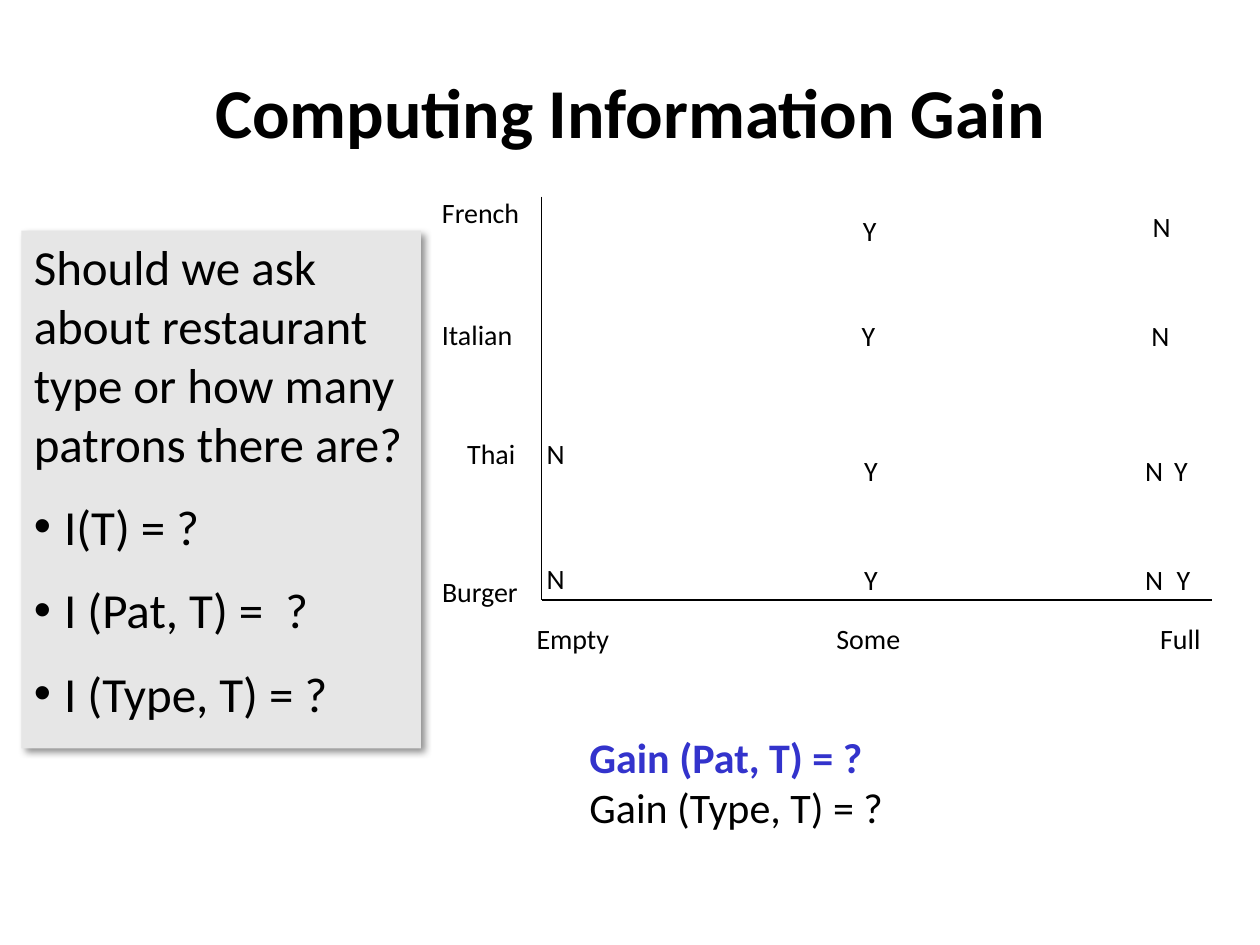
from lxml.etree import SubElement
from pptx import Presentation
from pptx.dml.color import RGBColor
from pptx.enum.shapes import MSO_CONNECTOR, MSO_SHAPE
from pptx.enum.text import MSO_ANCHOR, PP_ALIGN
from pptx.oxml import parse_xml
from pptx.oxml.ns import nsdecls, qn
from pptx.util import Inches, Pt

BLACK = RGBColor(0, 0, 0)
BLUE = RGBColor(0x33, 0x33, 0xCC)
GREY = RGBColor(0xE6, 0xE6, 0xE6)

prs = Presentation()
prs.slide_width, prs.slide_height = Inches(10), Inches(7.5)
s = prs.slides.add_slide(prs.slide_layouts[6])
COL, ROW = prs.slide_width / 100, prs.slide_height / 100


def area(left, top, width, height):
    """Turn percentages of the slide into lengths."""
    return int(left * COL), int(top * ROW), int(width * COL), int(height * ROW)


def write(sp, lines, size, wrap=True):
    tf = sp.text_frame
    tf.word_wrap = wrap
    tf.text = "\n".join(lines)
    for p in tf.paragraphs:
        p.alignment = PP_ALIGN.LEFT
        for r in p.runs:
            r.font.name, r.font.size = "Calibri", Pt(size)
            r.font.color.rgb = BLACK
    return tf


# Title
tf = write(s.shapes.add_textbox(*area(7.5, 3.33, 85, 16.67)),
           ["Computing Information Gain"], 40)
tf.vertical_anchor = MSO_ANCHOR.MIDDLE
tf.paragraphs[0].alignment = PP_ALIGN.CENTER
tf.paragraphs[0].runs[0].font.bold = True

# Axes
LEFT, RIGHT, TOP, BOTTOM = 43, 96.2, 20.8, 63.5
for x1, y1, x2, y2 in [(LEFT, TOP, LEFT, BOTTOM), (LEFT, BOTTOM, RIGHT, BOTTOM)]:
    axis = s.shapes.add_connector(MSO_CONNECTOR.STRAIGHT, *area(x1, y1, x2, y2))
    axis.line.color.rgb, axis.line.width = BLACK, Pt(0.75)
    SubElement(axis._element.spPr, qn("a:effectLst"))

# Axis labels and marks: text, left, top, width
labels = [("French", 34.1, 20, 8.3), ("Italian", 34.1, 32.9, 7.7),
          ("Thai", 36.1, 45.5, 6.1), ("Burger", 34.1, 60.1, 8.2),
          ("Empty", 41.6, 65.1, 7.9), ("Some", 65.4, 65.1, 7.1),
          ("Full", 91.1, 65.1, 5.3)]
MARK_WIDTH = {"Y": 3.1, "N": 3.5}
marks = [("Y", 67.5, 21.9), ("N", 90.5, 21.5),
         ("Y", 67.4, 33.1), ("N", 90.4, 33.1),
         ("N", 42.4, 45.5), ("Y", 67.6, 47.3), ("N", 89.9, 47.3), ("Y", 92.2, 47.3),
         ("N", 42.4, 58.8), ("Y", 67.6, 58.9), ("N", 89.9, 58.9), ("Y", 92.4, 58.9)]
labels += [(mark, left, top, MARK_WIDTH[mark]) for mark, left, top in marks]
for text, left, top, width in labels:
    write(s.shapes.add_textbox(*area(left, top, width, 4.93)), [text], 16, wrap=False)

# Question panel
panel = s.shapes.add_shape(MSO_SHAPE.RECTANGLE, *area(1.7, 24.4, 31.7, 54.8))
panel.fill.solid()
panel.fill.fore_color.rgb = GREY
panel.line.fill.background()
panel._element.spPr.append(parse_xml(
    f'<a:effectLst {nsdecls("a")}><a:outerShdw blurRad="{Pt(4)}" dist="{Pt(3)}" '
    'dir="2700000" algn="tl" rotWithShape="0"><a:srgbClr val="000000">'
    '<a:alpha val="43000"/></a:srgbClr></a:outerShdw></a:effectLst>'))
tf = write(panel, ["Should we ask about restaurant type or how many patrons there are?",
                   "I(T) = ?", "I (Pat, T) =  ?", "I (Type, T) = ?"], 28)
tf.vertical_anchor = MSO_ANCHOR.TOP
for p in tf.paragraphs[1:]:
    p.space_before = Pt(14)
    pPr = p._p.get_or_add_pPr()
    indent = Inches(0.24)
    pPr.set("marL", str(indent))
    pPr.set("indent", str(-indent))
    SubElement(pPr, qn("a:buFont")).set("typeface", "Arial")
    SubElement(pPr, qn("a:buChar")).set("char", "•")

# Gains
tf = write(s.shapes.add_textbox(*area(45.8, 76.7, 42.5, 12.1)),
           ["Gain (Pat, T) = ?", "Gain (Type, T) = ?"], 24)
font = tf.paragraphs[0].runs[0].font
font.bold, font.color.rgb = True, BLUE

prs.save("out.pptx")
